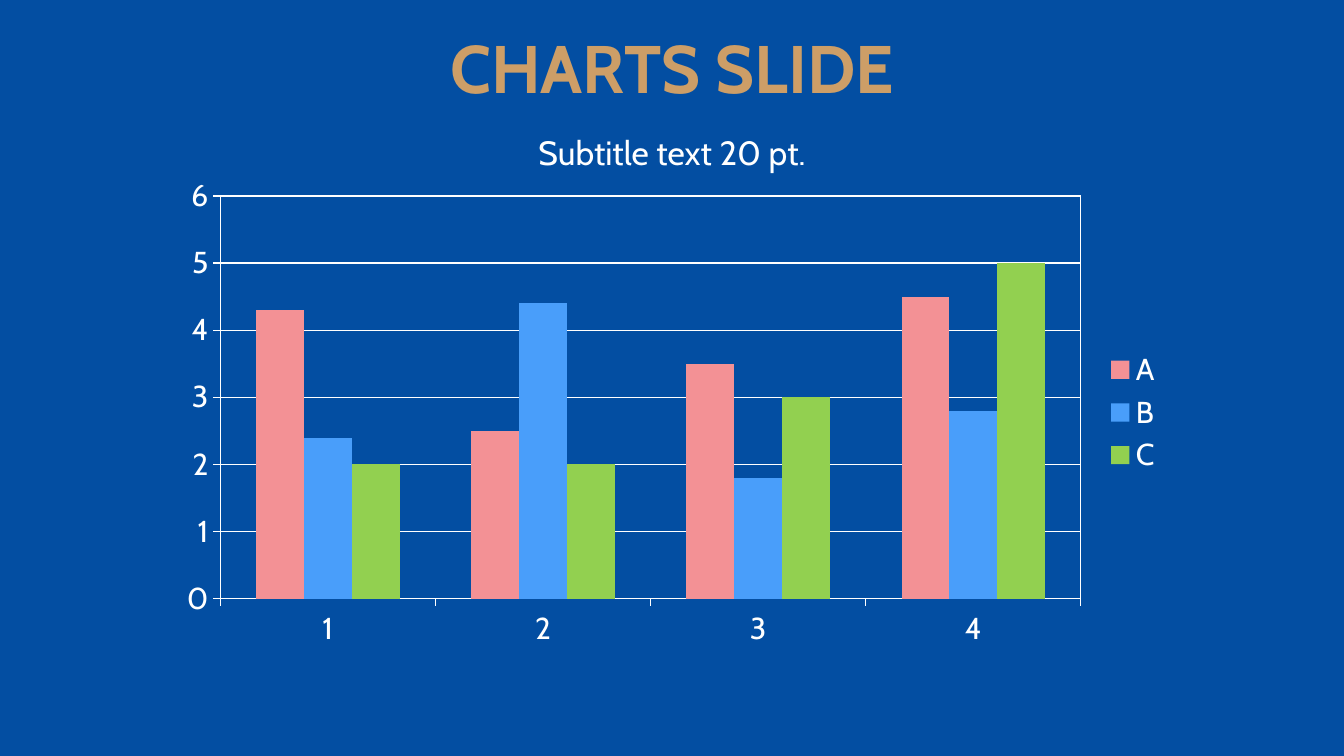
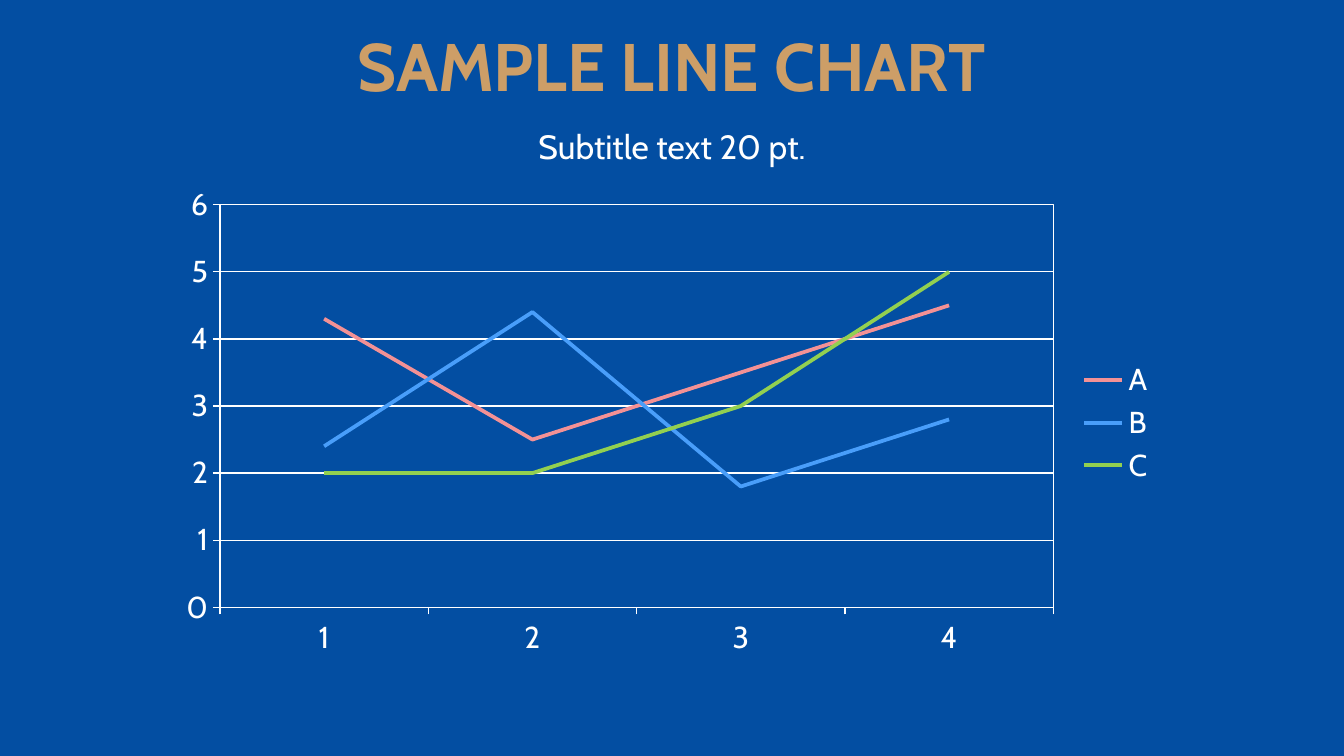
from dataclasses import dataclass

from lxml.etree import SubElement
from pptx import Presentation
from pptx.chart.chart import Chart
from pptx.chart.data import CategoryChartData
from pptx.dml.color import RGBColor
from pptx.enum.chart import XL_CHART_TYPE, XL_LEGEND_POSITION, XL_TICK_MARK
from pptx.enum.text import MSO_ANCHOR, MSO_AUTO_SIZE, PP_ALIGN
from pptx.oxml import parse_xml
from pptx.oxml.ns import nsdecls, qn
from pptx.util import Inches, Pt

WIDTH, HEIGHT = Inches(11.11), Inches(6.25)
FONT = "Cabin"
BLUE, GOLD, WHITE = "034EA2", "CD9E67", "FFFFFF"
CATS = ["1", "2", "3", "4"]


@dataclass(frozen=True)
class Box:
    """Shares of the parent's size, in percent."""
    x: float
    y: float
    w: float
    h: float

    def place(self) -> tuple[int, int, int, int]:
        return (int(WIDTH * self.x / 100), int(HEIGHT * self.y / 100),
                int(WIDTH * self.w / 100), int(HEIGHT * self.h / 100))


@dataclass(frozen=True)
class Series:
    name: str
    vals: tuple[float, ...]
    color: str


@dataclass(frozen=True)
class Page:
    title: str
    kind: XL_CHART_TYPE
    head: Box
    sub: Box
    chart: Box
    plot: Box


DATA = [
    Series("A", (4.3, 2.5, 3.5, 4.5), "F39195"),
    Series("B", (2.4, 4.4, 1.8, 2.8), "499EFA"),
    Series("C", (2, 2, 3, 5), "92D050"),
]

PAGES = [
    Page("CHARTS SLIDE", XL_CHART_TYPE.COLUMN_CLUSTERED,
         Box(7.47, 3.04, 85.06, 12.96), Box(7.47, 17.28, 85.06, 6.24),
         Box(12.42, 22.24, 74.98, 64.64), Box(5.3, 5.7, 85.4, 82.4)),
    Page("SAMPLE LINE CHART", XL_CHART_TYPE.LINE,
         Box(2.7, 2.72, 94.51, 13.12), Box(7.47, 16.16, 85.06, 6.88),
         Box(12.42, 23.52, 74.44, 64.8), Box(5.3, 5.5, 83.3, 82.2)),
]


def rgb(code: str) -> RGBColor:
    return RGBColor.from_string(code)


def style(font, size: float, color: str, bold: bool = False) -> None:
    font.name, font.size, font.bold = FONT, Pt(size), bold
    font.color.rgb = rgb(color)


def stroke(line, color: str, width: float) -> None:
    line.color.rgb = rgb(color)
    line.width = Pt(width)


def write(shape, box: Box, text: str, size: float, color: str,
          bold: bool = False) -> None:
    shape.left, shape.top, shape.width, shape.height = box.place()
    frame = shape.text_frame
    frame.text = text
    frame.word_wrap = True
    frame.auto_size = MSO_AUTO_SIZE.NONE
    frame.vertical_anchor = MSO_ANCHOR.MIDDLE
    frame.margin_left = frame.margin_right = Inches(0.05)
    frame.margin_top = frame.margin_bottom = Inches(0.05)
    par = frame.paragraphs[0]
    par.alignment = PP_ALIGN.CENTER
    par.line_spacing = 0.9
    par.space_before = Pt(0)
    style(par.font, size, color, bold)


def frame_plot(chart: Chart, box: Box) -> None:
    area = chart.element.find(".//" + qn("c:plotArea"))
    for old in area.findall(qn("c:layout")):
        area.remove(old)
    layout = parse_xml(f"<c:layout {nsdecls('c')}/>")
    manual = SubElement(layout, qn("c:manualLayout"))
    parts = [("layoutTarget", "inner"), ("xMode", "edge"), ("yMode", "edge")]
    parts += [(key, f"{getattr(box, key) / 100:.3f}") for key in "xywh"]
    for tag, val in parts:
        SubElement(manual, qn("c:" + tag)).set("val", val)
    area.insert(0, layout)
    area.append(parse_xml(
        f"<c:spPr {nsdecls('c', 'a')}><a:noFill/><a:ln w=\"{Pt(0.75)}\">"
        f"<a:solidFill><a:srgbClr val=\"{WHITE}\"/></a:solidFill>"
        "</a:ln></c:spPr>"))


def draw_chart(slide, page: Page) -> None:
    data = CategoryChartData()
    data.categories = CATS
    for item in DATA:
        data.add_series(item.name, item.vals)
    chart = slide.shapes.add_chart(page.kind, *page.chart.place(), data).chart
    chart.has_title = False
    style(chart.font, 18, WHITE)
    chart.has_legend = True
    chart.legend.position = XL_LEGEND_POSITION.RIGHT
    chart.legend.include_in_layout = False
    style(chart.legend.font, 18, WHITE)

    for axis in (chart.category_axis, chart.value_axis):
        axis.major_tick_mark = XL_TICK_MARK.OUTSIDE
        axis.minor_tick_mark = XL_TICK_MARK.NONE
        style(axis.tick_labels.font, 18, WHITE)
        stroke(axis.format.line, WHITE, 0.75)
    scale = chart.value_axis
    scale.minimum_scale, scale.maximum_scale, scale.major_unit = 0, 6, 1
    scale.has_major_gridlines = True
    stroke(scale.major_gridlines.format.line, WHITE, 0.75)

    plot = chart.plots[0]
    plot.vary_by_categories = False
    bars = page.kind == XL_CHART_TYPE.COLUMN_CLUSTERED
    if bars:
        plot.gap_width = 150
    for line, item in zip(plot.series, DATA):
        if bars:
            line.format.fill.solid()
            line.format.fill.fore_color.rgb = rgb(item.color)
        else:
            line.smooth = False
            stroke(line.format.line, item.color, 2.25)
    frame_plot(chart, page.plot)


def main() -> None:
    deck = Presentation()
    deck.slide_width, deck.slide_height = WIDTH, HEIGHT
    fill = deck.slide_master.background.fill
    fill.solid()
    fill.fore_color.rgb = rgb(BLUE)
    for page in PAGES:
        slide = deck.slides.add_slide(deck.slide_layouts[5])
        write(slide.shapes.title, page.head, page.title, 40, GOLD, True)
        sub = slide.shapes.add_textbox(*page.sub.place())
        write(sub, page.sub, "Subtitle text 20 pt.", 20, WHITE)
        draw_chart(slide, page)
    deck.save("out.pptx")


if __name__ == "__main__":
    main()
